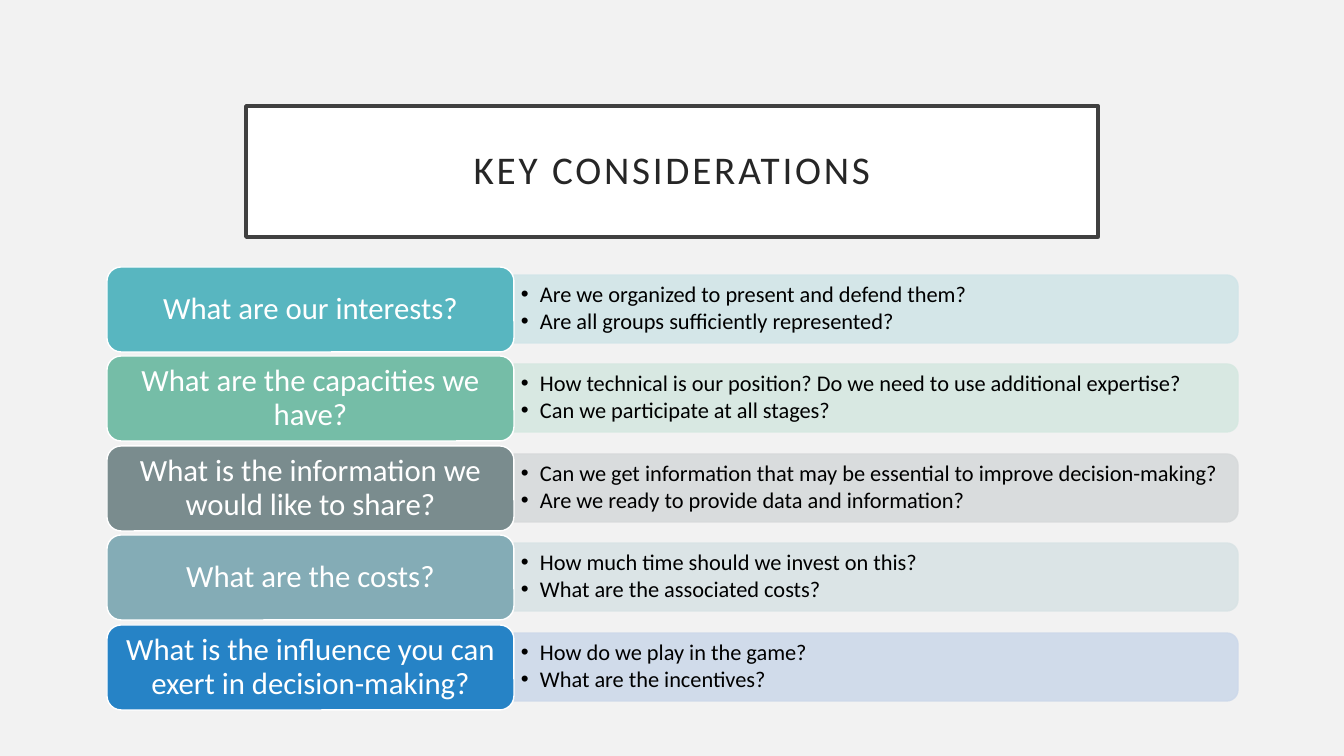
"""Build the key considerations slide: a framed title above five question rows."""

from dataclasses import dataclass

from lxml import etree
from pptx import Presentation
from pptx.dml.color import RGBColor
from pptx.enum.shapes import MSO_SHAPE
from pptx.enum.text import MSO_ANCHOR, MSO_AUTO_SIZE, PP_ALIGN
from pptx.oxml.ns import qn
from pptx.shapes.autoshape import Shape
from pptx.slide import Slide
from pptx.text.text import TextFrame
from pptx.util import Emu, Pt

ROUNDED = MSO_SHAPE.ROUNDED_RECTANGLE
TOP_ROUNDED = MSO_SHAPE.ROUND_2_SAME_RECTANGLE
MIDDLE = MSO_ANCHOR.MIDDLE
NO_FIT = MSO_AUTO_SIZE.NONE
CENTER = PP_ALIGN.CENTER
LEFT = PP_ALIGN.LEFT

PAGE_WIDTH, PAGE_HEIGHT = 1344, 756
SCALE = 12192000 / PAGE_WIDTH
FONT = "Calibri"
LINE_SPACING = 0.9

FIRST_TOP, LAST_TOP = 267, 625
QUESTION_LEFT, QUESTION_WIDTH, QUESTION_HEIGHT = 107, 407, 85
BAND_LEFT, BAND_WIDTH, BAND_HEIGHT = 514, 724, 68
DETAIL_WIDTH, DETAIL_HEIGHT = 721, 62
BULLET_INDENT = 19


@dataclass(frozen=True)
class Consideration:
    question: str
    details: tuple[str, str]
    color: str
    tint: str


CONSIDERATIONS = (
    Consideration(
        "What are our interests?",
        ("Are we organized to present and defend them?",
         "Are all groups sufficiently represented?"),
        "58B6C0", "D1E5E8"),
    Consideration(
        "What are the capacities we have?",
        ("How technical is our position? Do we need to use additional expertise?",
         "Can we participate at all stages?"),
        "75BDA7", "D6E8E1"),
    Consideration(
        "What is the information we would like to share?",
        ("Can we get information that may be essential to improve decision-making?",
         "Are we ready to provide data and information?"),
        "7A8C8E", "D7DADB"),
    Consideration(
        "What are the costs?",
        ("How much time should we invest on this?",
         "What are the associated costs?"),
        "84ACB6", "D9E3E5"),
    Consideration(
        "What is the influence you can exert in decision-making?",
        ("How do we play in the game?",
         "What are the incentives?"),
        "2683C6", "CDD9EA"),
)


def px(length: int) -> Emu:
    return Emu(round(length * SCALE))


def color(value: str) -> RGBColor:
    return RGBColor.from_string(value)


def paint(box: Shape, fill: str, line: str, width: float) -> None:
    box.fill.solid()
    box.fill.fore_color.rgb = color(fill)
    box.line.color.rgb = color(line)
    box.line.width = Pt(width)


def prepare(frame: TextFrame, side: int, end: int) -> None:
    frame.word_wrap = True
    frame.auto_size = NO_FIT
    frame.vertical_anchor = MIDDLE
    frame.margin_left = frame.margin_right = px(side)
    frame.margin_top = frame.margin_bottom = px(end)


def write(frame: TextFrame, lines: tuple[str, ...], size: int, ink: str,
          align: PP_ALIGN, gap: int = 0) -> None:
    for index, line in enumerate(lines):
        para = frame.add_paragraph() if index else frame.paragraphs[0]
        para.alignment = align
        para.line_spacing = LINE_SPACING
        para.space_after = Pt(gap)
        span = para.add_run()
        span.text = line
        span.font.name = FONT
        span.font.size = Pt(size)
        span.font.color.rgb = color(ink)


def add_bullets(frame: TextFrame) -> None:
    for para in frame.paragraphs:
        para.level = 1
        properties = para._p.get_or_add_pPr()
        properties.set("marL", str(px(BULLET_INDENT)))
        properties.set("indent", str(-px(BULLET_INDENT)))
        etree.SubElement(properties, qn("a:buFont")).set("typeface", "Arial")
        etree.SubElement(properties, qn("a:buChar")).set("char", "•")


def format_title(page: Slide) -> None:
    title = page.shapes.title
    title.left, title.top = px(246), px(106)
    title.width, title.height = px(852), px(131)
    paint(title, "FFFFFF", "404040", 2.5)
    prepare(title.text_frame, 20, 20)
    write(title.text_frame, ("KEY CONSIDERATIONS",), 28, "262626", CENTER)
    span = title.text_frame.paragraphs[0].runs[0]
    span.font._element.set("spc", "200")


def add_band(page: Slide, top: int, tint: str) -> None:
    turn = (BAND_WIDTH - BAND_HEIGHT) // 2
    band = page.shapes.add_shape(
        TOP_ROUNDED, px(BAND_LEFT + turn), px(top - turn), px(BAND_HEIGHT), px(BAND_WIDTH))
    band.rotation = 90
    band.shadow.inherit = False
    paint(band, tint, tint, 1)
    for shade in band.element.spPr.iter(qn("a:srgbClr")):
        etree.SubElement(shade, qn("a:alpha")).set("val", "90000")


def add_details(page: Slide, top: int, details: tuple[str, ...]) -> None:
    box = page.shapes.add_textbox(px(BAND_LEFT), px(top), px(DETAIL_WIDTH), px(DETAIL_HEIGHT))
    prepare(box.text_frame, 7, 3)
    write(box.text_frame, details, 16, "000000", LEFT, 2)
    add_bullets(box.text_frame)


def add_question(page: Slide, top: int, item: Consideration) -> None:
    box = page.shapes.add_shape(
        ROUNDED, px(QUESTION_LEFT), px(top), px(QUESTION_WIDTH), px(QUESTION_HEIGHT))
    box.shadow.inherit = False
    paint(box, item.color, "FFFFFF", 1)
    prepare(box.text_frame, 9, 5)
    write(box.text_frame, (item.question,), 22, "FFFFFF", CENTER)


def add_row(page: Slide, top: int, item: Consideration) -> None:
    middle = top + QUESTION_HEIGHT // 2
    add_band(page, middle - BAND_HEIGHT // 2, item.tint)
    add_details(page, middle - DETAIL_HEIGHT // 2, item.details)
    add_question(page, top, item)


def main() -> None:
    deck = Presentation()
    deck.slide_width, deck.slide_height = px(PAGE_WIDTH), px(PAGE_HEIGHT)
    page = deck.slides.add_slide(deck.slide_layouts.get_by_name("Title Only"))
    page.background.fill.solid()
    page.background.fill.fore_color.rgb = color("F2F2F2")
    format_title(page)
    for row, item in enumerate(CONSIDERATIONS):
        top = FIRST_TOP + (LAST_TOP - FIRST_TOP) * row // (len(CONSIDERATIONS) - 1)
        add_row(page, top, item)
    deck.save("out.pptx")


if __name__ == "__main__":
    main()
